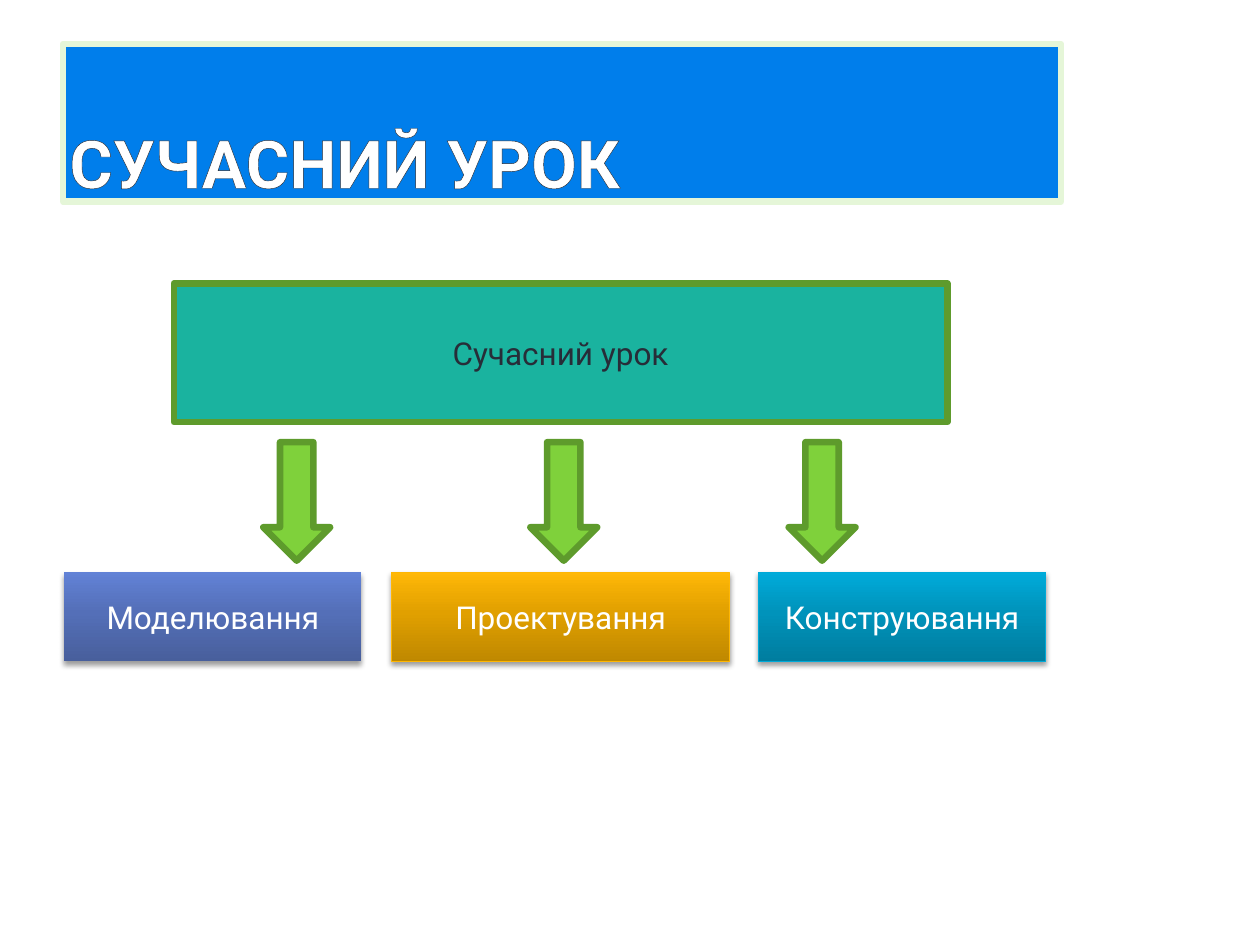
"""Build the slide that splits a modern lesson into three activities."""
from lxml import etree
from pptx import Presentation, util as u
from pptx.dml.color import RGBColor
from pptx.enum import shapes, text
from pptx.oxml import parse_xml
from pptx.oxml.ns import nsdecls, qn

THEME = {
    "font": "Roboto", "title": 38, "body": 18, "border": 3.78, "thin": 0.5,
    "white": "FFFFFF", "ink": "272D38", "outline": "252D39",
    "banner": "007EEB", "banner_line": "E5F6D8",
    "teal": "1AB39F", "green": "7FD13B", "green_line": "5E9B2C",
    "blue": ("485F9C", "546FB8", "6282D6"),
    "amber": ("BF8800", "E1A000", "FFB807"), "amber_line": "FEB604",
    "cyan": ("007D9F", "0093BB", "00ABDA"), "cyan_line": "00A9D7",
}

prs = Presentation()
prs.slide_width, prs.slide_height = u.Inches(10), u.Inches(7.5)
COL, ROW = prs.slide_width / 100, prs.slide_height / 75
s = prs.slides.add_slide(prs.slide_layouts[5])


def style(sp, box, fill=None, line=None, width=THEME["border"]):
    places = (box[0] * COL, box[1] * ROW, box[2] * COL, box[3] * ROW)
    for name, value in zip(("left", "top", "width", "height"), places):
        setattr(sp, name, u.Emu(round(value)))
    if fill:
        sp.fill.solid()
        sp.fill.fore_color.rgb = RGBColor.from_string(fill)
    if line:
        sp.line.color.rgb = RGBColor.from_string(line)
        sp.line.width = u.Pt(width)
        etree.SubElement(sp.line._get_or_add_ln(), qn("a:round"))
    else:
        sp.line.fill.background()
    sp.shadow.inherit = False


def write(sp, words, color, size, align, anchor, bold=False):
    tf = sp.text_frame
    for name, value in {"word_wrap": True, "vertical_anchor": anchor,
                        "auto_size": text.MSO_AUTO_SIZE.NONE}.items():
        setattr(tf, name, value)
    p = tf.paragraphs[0]
    p.alignment = align
    r = p.add_run()
    r.text = words
    for name, value in {"name": THEME["font"], "size": u.Pt(size), "bold": bold}.items():
        setattr(r.font, name, value)
    r.font.color.rgb = RGBColor.from_string(color)
    return r


title = s.shapes.title
style(title, (5, 3.5, 79.2, 12.5), THEME["banner"], THEME["banner_line"])
r = write(title, "СУЧАСНИЙ УРОК", THEME["white"], THEME["title"],
          text.PP_ALIGN.LEFT, text.MSO_ANCHOR.BOTTOM, True)
for side, inset in {"left": 0.05, "top": 0, "right": 0.05, "bottom": 0}.items():
    setattr(title.text_frame, f"margin_{side}", u.Inches(inset))
r.font._element.insert(0, parse_xml(
    f'<a:ln {nsdecls("a")} w="500"><a:solidFill>'
    f'<a:srgbClr val="{THEME["outline"]}"/></a:solidFill></a:ln>'))

CENTER, MIDDLE = text.PP_ALIGN.CENTER, text.MSO_ANCHOR.MIDDLE
RECT, ARROW = shapes.MSO_SHAPE.RECTANGLE, shapes.MSO_SHAPE.DOWN_ARROW

lesson = s.shapes.add_shape(RECT, 0, 0, 0, 0)
style(lesson, (13.8, 22.5, 61.4, 11), THEME["teal"], THEME["green_line"])
write(lesson, "Сучасний урок", THEME["ink"], THEME["body"], CENTER, MIDDLE)

activities = (
    ("Моделювання", 5.1, 23.6, 20.9, "blue", None),
    ("Проектування", 31.1, 26.8, 42.1, "amber", THEME["amber_line"]),
    ("Конструювання", 60.2, 22.8, 62.6, "cyan", THEME["cyan_line"]),
)
for words, left, width, arrow_left, ramp, line in activities:
    arrow = s.shapes.add_shape(ARROW, 0, 0, 0, 0)
    style(arrow, (arrow_left, 35.1, 5.3, 9.4), THEME["green"], THEME["green_line"])

    card = s.shapes.add_shape(RECT, 0, 0, 0, 0)
    style(card, (left, 45.4, width, 7.1), None, line, THEME["thin"])
    stops = "".join(f'<a:gs pos="{pos}000"><a:srgbClr val="{color}"/></a:gs>'
                    for pos, color in zip((0, 55, 100), THEME[ramp]))
    spPr = card._element.spPr
    spPr.find(qn("a:prstGeom")).addnext(parse_xml(
        f'<a:gradFill {nsdecls("a")} rotWithShape="1"><a:gsLst>{stops}</a:gsLst>'
        '<a:lin ang="16200000" scaled="0"/></a:gradFill>'))
    spPr.find(qn("a:effectLst")).append(parse_xml(
        f'<a:outerShdw {nsdecls("a")} blurRad="{u.Pt(3.1)}" dist="{u.Pt(2)}" '
        'dir="5400000" rotWithShape="0"><a:srgbClr val="000000">'
        '<a:alpha val="38000"/></a:srgbClr></a:outerShdw>'))
    write(card, words, THEME["white"], THEME["body"], CENTER, MIDDLE)

prs.save("out.pptx")
